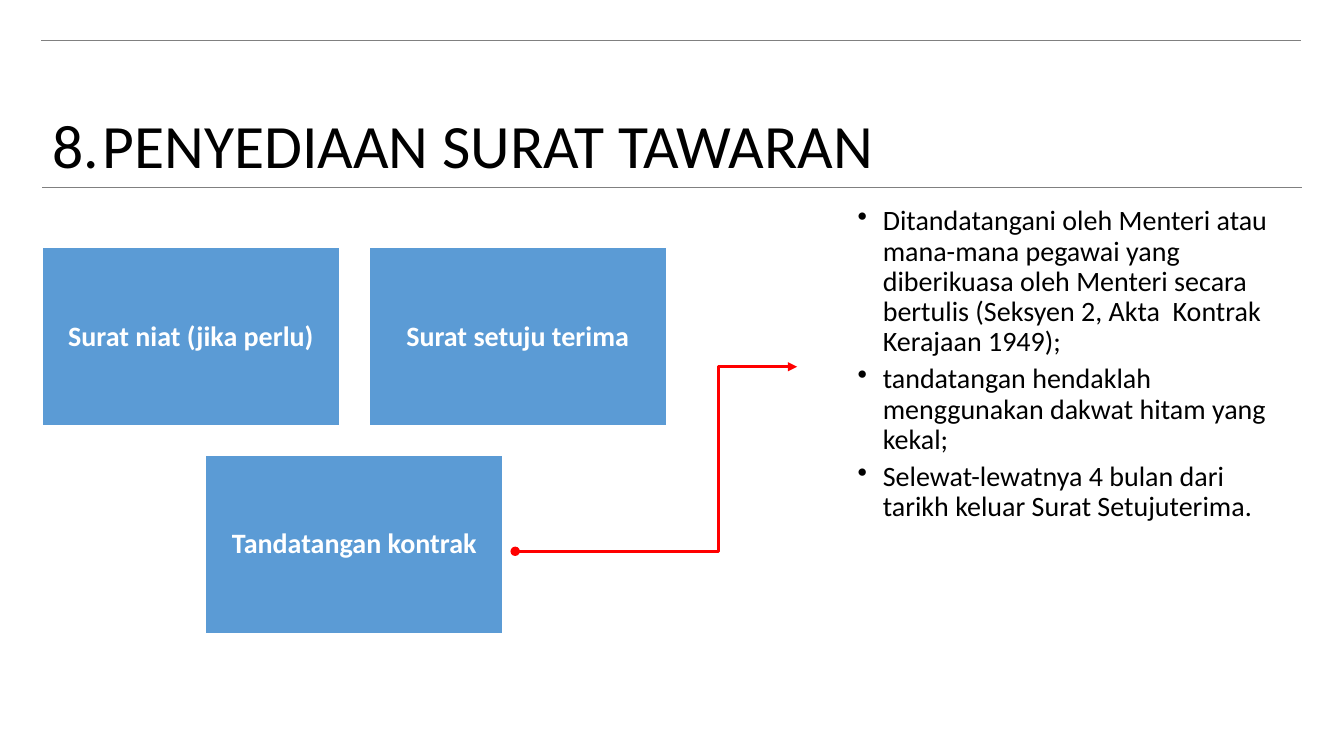
import pptx
import pptx.dml.color
import pptx.enum.shapes
import pptx.enum.text
import pptx.oxml
import pptx.oxml.ns
import pptx.util

Pt = pptx.util.Pt
qn = pptx.oxml.ns.qn
CONNECTOR = pptx.enum.shapes.MSO_CONNECTOR
ANCHOR = pptx.enum.text.MSO_ANCHOR

BLACK = pptx.dml.color.RGBColor(0, 0, 0)
WHITE = pptx.dml.color.RGBColor(255, 255, 255)
GREY = pptx.dml.color.RGBColor(0x80, 0x80, 0x80)
BLUE = pptx.dml.color.RGBColor(0x5B, 0x9B, 0xD5)
RED = pptx.dml.color.RGBColor(255, 0, 0)

FONT = "Calibri"
TITLE = "8.\tPENYEDIAAN SURAT TAWARAN"
LETTERS = ["Surat niat (jika perlu)", "Surat setuju terima"]
SIGNING = "Tandatangan kontrak"
CONDITIONS = [
    "Ditandatangani oleh Menteri atau mana-mana pegawai yang diberikuasa oleh "
    "Menteri secara bertulis (Seksyen 2, Akta  Kontrak Kerajaan 1949);",
    "tandatangan hendaklah menggunakan dakwat hitam yang kekal;",
    "Selewat-lewatnya 4 bulan dari tarikh keluar Surat Setujuterima.",
]


def format_paragraph(paragraph, size, color, bold=False):
    paragraph.line_spacing = 0.9
    for run in paragraph.runs:
        run.font.name = FONT
        run.font.size = Pt(size)
        run.font.color.rgb = color
        run.font.bold = bold


def add_line(slide, kind, start, end, color, width):
    line = slide.shapes.add_connector(kind, *(Pt(v) for v in start + end))
    line.line.color.rgb = color
    line.line.width = Pt(width)
    properties = line.line._get_or_add_ln().getparent()
    properties.append(pptx.oxml.parse_xml(
        f'<a:effectLst {pptx.oxml.ns.nsdecls("a")}/>'))
    return line


def add_title(slide, left, top, width, height):
    """Title standing on the lower of two rules."""
    for x, y in ((left - 0.7, top), (left, top + height + 0.7)):
        add_line(slide, CONNECTOR.STRAIGHT, (x, y), (x + width, y), GREY, 1)
    title = slide.shapes.add_textbox(Pt(left), Pt(top), Pt(width), Pt(height))
    frame = title.text_frame
    frame.vertical_anchor = ANCHOR.BOTTOM
    frame.text = TITLE
    frame.word_wrap = False
    format_paragraph(frame.paragraphs[0], 44, BLACK)


def add_step(slide, text, left, top, width, height):
    step = slide.shapes.add_shape(
        pptx.enum.shapes.MSO_SHAPE.RECTANGLE,
        Pt(left), Pt(top), Pt(width), Pt(height))
    step.shadow.inherit = False
    step.fill.solid()
    step.fill.fore_color.rgb = BLUE
    step.line.color.rgb = WHITE
    step.line.width = Pt(1)
    frame = step.text_frame
    frame.margin_left = frame.margin_right = Pt(6)
    frame.margin_top = frame.margin_bottom = Pt(6)
    frame.vertical_anchor = ANCHOR.MIDDLE
    frame.word_wrap = True
    frame.text = text
    frame.paragraphs[0].alignment = pptx.enum.text.PP_ALIGN.CENTER
    format_paragraph(frame.paragraphs[0], 20, WHITE, bold=True)


def add_steps(slide, left, top, width, height, gap):
    """Two letters side by side, the signing centred below them."""
    step_width = (width - gap) / 2
    step_height = (height - gap) / 2
    for column, letter in enumerate(LETTERS):
        add_step(slide, letter, left + column * (step_width + gap), top,
                 step_width, step_height)
    add_step(slide, SIGNING, left + (width - step_width) / 2,
             top + step_height + gap, step_width, step_height)


def add_conditions(slide, left, top, width, height):
    box = slide.shapes.add_textbox(Pt(left), Pt(top), Pt(width), Pt(height))
    frame = box.text_frame
    frame.word_wrap = True
    frame.text = "\n".join(CONDITIONS)
    for index, paragraph in enumerate(frame.paragraphs):
        paragraph.level = 1
        properties = paragraph._p.get_or_add_pPr()
        properties.set("marL", str(Pt(54)))
        properties.set("indent", str(Pt(-18)))
        bullet = properties.makeelement(qn("a:buChar"), {"char": "•"})
        properties.append(bullet)
        if index:
            paragraph.space_before = Pt(5)
        format_paragraph(paragraph, 20, BLACK)


def add_signing_arrow(slide, start, end):
    """Elbow from the signing step to its conditions."""
    arrow = add_line(slide, CONNECTOR.ELBOW, start, end, RED, 2.25)
    outline = arrow.line._get_or_add_ln()
    for tag, kind in (("a:headEnd", "oval"), ("a:tailEnd", "triangle")):
        outline.append(outline.makeelement(qn(tag), {"type": kind}))
    geometry = outline.getparent().find(qn("a:prstGeom"))
    guides = geometry.find(qn("a:avLst"))
    guides.append(guides.makeelement(
        qn("a:gd"), {"name": "adj1", "fmla": "val 72200"}))


def main():
    presentation = pptx.Presentation()
    presentation.slide_width = Pt(960)
    presentation.slide_height = Pt(540)
    slide = presentation.slides.add_slide(presentation.slide_layouts[6])
    add_title(slide, 30.2, 28.8, 900, 104.4)
    add_steps(slide, 30.2, 177, 445.8, 275.8, gap=21)
    add_conditions(slide, 569.5, 144, 360.7, 236.9)
    add_signing_arrow(slide, (368, 393.8), (569.5, 262))
    presentation.save("out.pptx")


if __name__ == "__main__":
    main()
